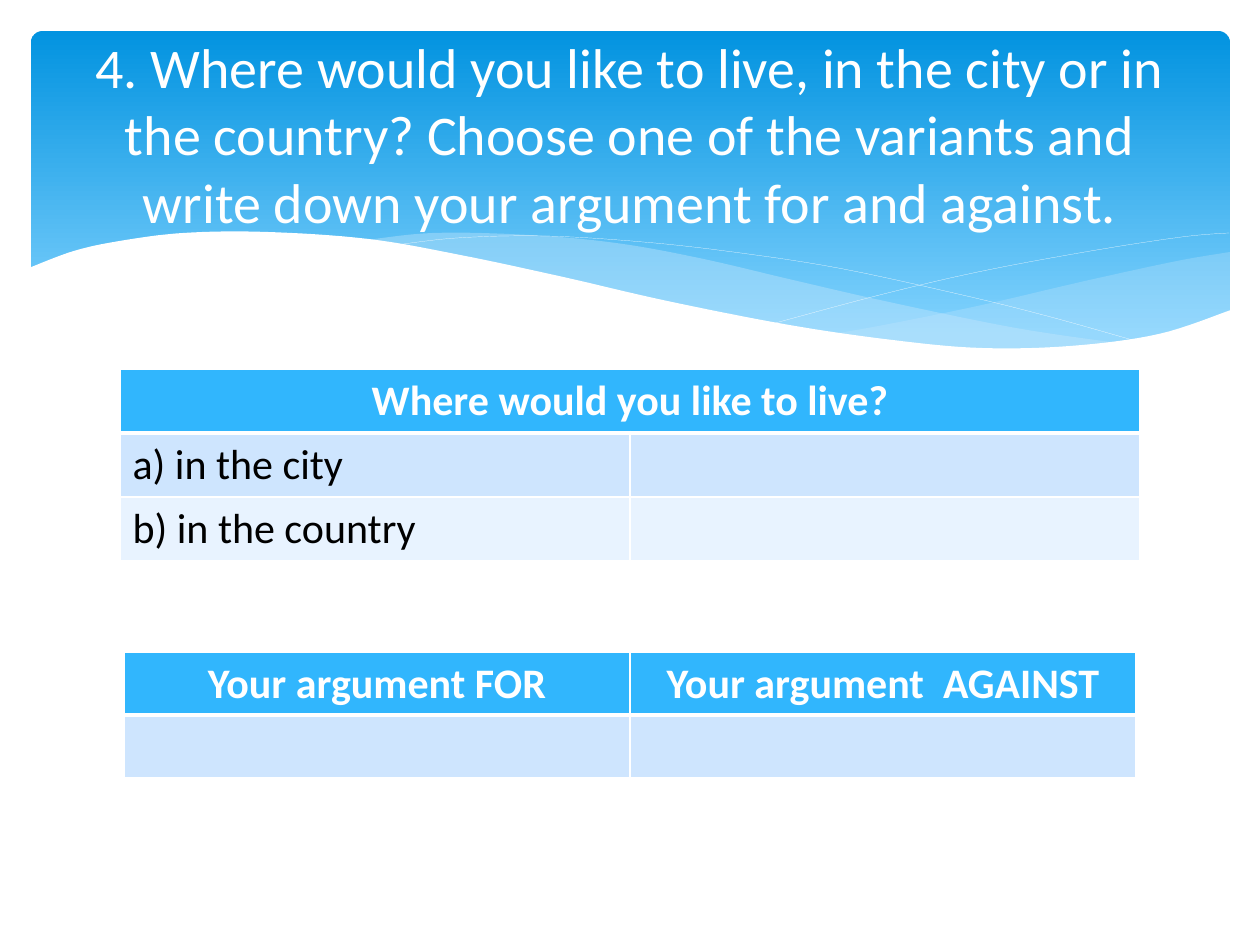
from typing import NamedTuple

from lxml import etree
from pptx import Presentation
from pptx.dml.color import RGBColor
from pptx.enum import shapes, text
from pptx.oxml.ns import qn
from pptx.util import Emu, Pt

SCALE = 914400 / 126
FONT = "Calibri"
WHITE, BLUE, PALE, FAINT = "FFFFFF", "31B6FD", "CEE5FE", "E8F3FF"
MIST = "C6E7FC"


class Wave(NamedTuple):
    curves: list  # each curve is smoothed; they join end to end
    fill: str = ""
    alpha: int = 100


class Grid(NamedTuple):
    left: int
    top: int
    col: int
    row: int
    fills: list
    cells: list
    span: bool = False


def px(n: float) -> Emu:
    return Emu(round(n * SCALE))


def rgb(code: str) -> RGBColor:
    return RGBColor.from_string(code)


def smooth(pts: list, steps: int = 8) -> list:
    """Catmull-Rom curve through the points."""
    if len(pts) < 3:
        return pts
    ends = [pts[0], *pts, pts[-1]]
    out = [pts[0]]
    for a, b, c, d in zip(ends, ends[1:], ends[2:], ends[3:]):
        for i in range(1, steps + 1):
            t = i / steps
            out.append(tuple(
                q + t * (r - p + t * (2 * p - 5 * q + 4 * r - s
                                      + t * (3 * q - p - 3 * r + s))) / 2
                for p, q, r, s in zip(a, b, c, d)))
    return out


def draw_wave(slide, wave: Wave) -> None:
    pts = [(px(x), px(y)) for curve in wave.curves for x, y in smooth(curve)]
    pen = slide.shapes.build_freeform(*pts[0])
    pen.add_line_segments(pts[1:], close=bool(wave.fill))
    shape = pen.convert_to_shape()
    shape.shadow.inherit = False
    if not wave.fill:
        shape.fill.background()
        shape.line.color.rgb = rgb(WHITE)
        shape.line.width = Pt(0.1)
        return
    shape.line.fill.background()
    shape.fill.solid()
    shape.fill.fore_color.rgb = rgb(wave.fill)
    if wave.alpha < 100:
        tint = shape.fill._xPr.find(".//" + qn("a:srgbClr"))
        etree.SubElement(tint, qn("a:alpha"), val=str(wave.alpha * 1000))


def set_edge(cell, side: str, width: int) -> None:
    line = etree.SubElement(cell._tc.get_or_add_tcPr(), qn("a:ln" + side),
                            w=str(Pt(width)))
    fill = etree.SubElement(line, qn("a:solidFill"))
    etree.SubElement(fill, qn("a:srgbClr"), val=WHITE)


def draw_grid(slide, grid: Grid) -> None:
    rows, cols = len(grid.cells), len(grid.cells[0])
    table = slide.shapes.add_table(
        rows, cols, px(grid.left), px(grid.top),
        px(grid.col * cols), px(grid.row * rows)).table
    for col in table.columns:
        col.width = px(grid.col)
    for r, words in enumerate(grid.cells):
        table.rows[r].height = px(grid.row)
        head = r == 0
        for c, word in enumerate(words):
            cell = table.cell(r, c)
            # A thick rule parts the header from the body
            for side, thick in (("L", False), ("R", False),
                                ("T", r == 1), ("B", head)):
                set_edge(cell, side, 3 if thick else 1)
            cell.fill.solid()
            cell.fill.fore_color.rgb = rgb(grid.fills[r])
            para = cell.text_frame.paragraphs[0]
            if word:
                para.text = word
            para.font.name, para.font.size = FONT, Pt(24)
            para.font.bold = head
            para.font.color.rgb = rgb(WHITE if head else "000000")
            if head:
                para.alignment = text.PP_ALIGN.CENTER
    if grid.span:
        table.cell(0, 0).merge(table.cell(0, cols - 1))


def draw_banner(slide) -> None:
    box = slide.shapes.add_shape(shapes.MSO_SHAPE.ROUNDED_RECTANGLE,
                                 px(31), px(31), px(1199), px(340))
    box.adjustments[0] = 0.034
    box.shadow.inherit = False
    box.line.fill.background()
    box.fill.gradient()
    box.fill.gradient_angle = 270
    stops = zip(box.fill.gradient_stops, ((0, "0293E0"), (0.9, "83D3FE")))
    for stop, (place, code) in stops:
        stop.position = place
        stop.color.rgb = rgb(code)


def draw_title(slide, words: str) -> None:
    frame = slide.shapes.add_textbox(px(63), px(47), px(1134), px(173)).text_frame
    frame.word_wrap = True
    frame.vertical_anchor = text.MSO_ANCHOR.MIDDLE
    para = frame.paragraphs[0]
    para.text = words
    para.alignment = text.PP_ALIGN.CENTER
    para.font.name, para.font.size = FONT, Pt(32)
    para.font.color.rgb = rgb(WHITE)


WAVES = [
    # Right and left mist
    Wave([[(1230, 252), (1177, 261), (1085, 281), (982, 305), (889, 324), (833, 334)],
          [(833, 334), (906, 344), (983, 349), (1052, 349), (1120, 342),
           (1178, 329), (1230, 311)]], MIST, 29),
    Wave([[(1125, 344), (1016, 328), (889, 302), (793, 280), (699, 258),
           (616, 243), (529, 235), (433, 233), (360, 241)],
          [(360, 241), (456, 256), (566, 280), (713, 312), (820, 333),
           (912, 345), (1003, 350), (1068, 349), (1125, 344)]], MIST, 40),
    # Thin crossing lines
    Wave([[(389, 246), (457, 238), (545, 236), (643, 242), (733, 252),
           (838, 268), (958, 294), (1047, 316), (1143, 343)]]),
    Wave([[(772, 324), (876, 296), (978, 272), (1091, 251), (1182, 237), (1229, 233)]]),
    # White lower edge
    Wave([[(1231, 310), (1159, 334), (1071, 346), (980, 348), (892, 340),
           (789, 325), (667, 301), (563, 277), (460, 255), (368, 239),
           (266, 232), (184, 233), (120, 241), (74, 251), (29, 268)],
          [(29, 415), (1231, 415)]], WHITE),
]

GRIDS = [
    Grid(120, 369, 510, 64, [BLUE, PALE, FAINT],
         [["Where would you like to live?", ""],
          ["a) in the city", ""],
          ["b) in the country", ""]], span=True),
    Grid(124, 652, 506, 63, [BLUE, PALE],
         [["Your argument FOR", "Your argument  AGAINST"], ["", ""]]),
]


def main() -> None:
    deck = Presentation()
    deck.slide_width, deck.slide_height = px(1260), px(945)
    slide = deck.slides.add_slide(deck.slide_layouts[6])
    draw_banner(slide)
    for wave in WAVES:
        draw_wave(slide, wave)
    draw_title(slide, "4. Where would you like to live, in the city or in the country? "
                      "Choose one of the variants and write down your argument "
                      "for and against.")
    for grid in GRIDS:
        draw_grid(slide, grid)
    deck.save("out.pptx")


if __name__ == "__main__":
    main()
